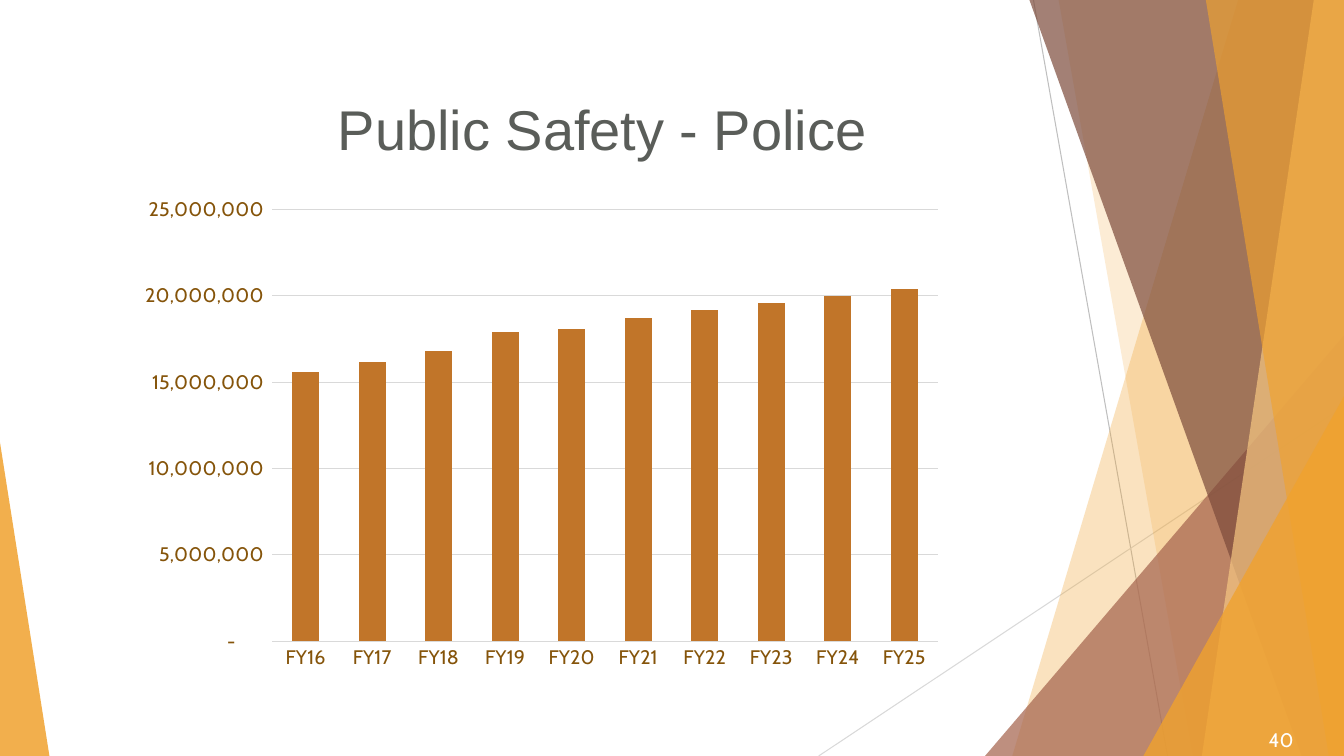
"""Build the police spending slide with its column chart and faceted backdrop."""
from dataclasses import dataclass

import pptx
import pptx.chart.data
import pptx.dml.color
import pptx.enum.chart
import pptx.enum.shapes
import pptx.enum.text
import pptx.oxml
import pptx.oxml.ns
import pptx.util

Inches = pptx.util.Inches
Pt = pptx.util.Pt
qn = pptx.oxml.ns.qn

WIDTH, HEIGHT = 13.33, 7.5
AMBER, RUST, BROWN, SAND = "F0A22E", "A5644E", "7C4B3B", "F6C782"
GRID, AXIS_TEXT, BAR = "D9D9D9", "85540A", "C17529"
NUMBER_FORMAT = '_(* #,##0_);_(* \\(#,##0\\);_(* "-"??_);_(@_)'
SPENDING = {
    "FY16": 15600000, "FY17": 16200000, "FY18": 16800000, "FY19": 17900000,
    "FY20": 18100000, "FY21": 18700000, "FY22": 19200000, "FY23": 19600000,
    "FY24": 20000000, "FY25": 20400000,
}


@dataclass
class Ray:
    start: tuple[float, float]
    end: tuple[float, float]
    color: str


@dataclass
class Band:
    top: float
    bottom: float
    color: str
    opacity: int


@dataclass
class Corner:
    left: float
    top: float
    width: float
    apex: int
    color: str
    opacity: int


BACKDROP = [
    Ray((10.25, 0), (11.58, HEIGHT), "BFBFBF"),
    Ray((WIDTH, 4.03), (8.12, HEIGHT), GRID),
    Band(12.28, 10.04, AMBER, 30),
    Band(10.5, 11.83, AMBER, 20),
    Corner(9.77, 3.33, 3.56, 1, RUST, 72),
    Band(10.21, 12.91, BROWN, 70),
    Band(13.03, 11.92, SAND, 70),
    Band(11.96, 13.18, AMBER, 65),
    Corner(11.34, 3.93, 1.99, 1, AMBER, 80),
    Corner(0, 4.39, 0.49, 0, AMBER, 85),
]


def rgb(color: str) -> pptx.dml.color.RGBColor:
    return pptx.dml.color.RGBColor.from_string(color)


def paint(sp, color: str, opacity: int) -> None:
    sp.shadow.inherit = False
    sp.line.fill.background()
    sp.fill.solid()
    sp.fill.fore_color.rgb = rgb(color)
    clr = sp.fill._xPr.find(qn("a:solidFill"))[0]
    clr.append(pptx.oxml.parse_xml(
        f'<a:alpha {pptx.oxml.ns.nsdecls("a")} val="{opacity * 1000}"/>'))


def draw_ray(s, ray: Ray) -> None:
    points = [Inches(v) for v in (*ray.start, *ray.end)]
    line = s.shapes.add_connector(pptx.enum.shapes.MSO_CONNECTOR.STRAIGHT, *points)
    line.line.color.rgb = rgb(ray.color)
    line.line.width = Pt(0.75)
    line._element.spPr.append(pptx.oxml.parse_xml(
        f'<a:effectLst {pptx.oxml.ns.nsdecls("a")}/>'))


def draw_band(s, band: Band) -> None:
    builder = s.shapes.build_freeform(Inches(band.top), 0)
    corners = [(WIDTH, 0), (WIDTH, HEIGHT), (band.bottom, HEIGHT)]
    builder.add_line_segments([(Inches(x), Inches(y)) for x, y in corners])
    paint(builder.convert_to_shape(), band.color, band.opacity)


def draw_corner(s, corner: Corner) -> None:
    box = (corner.left, corner.top, corner.width, HEIGHT - corner.top)
    sp = s.shapes.add_shape(pptx.enum.shapes.MSO_SHAPE.ISOSCELES_TRIANGLE,
                            *[Inches(v) for v in box])
    sp.adjustments[0] = corner.apex
    paint(sp, corner.color, corner.opacity)


def write(sp, text: str, *, font: str, size: float, color: str, align, anchor) -> None:
    tf = sp.text_frame
    tf.word_wrap = True
    tf.auto_size = pptx.enum.text.MSO_AUTO_SIZE.NONE
    tf.vertical_anchor = anchor
    p = tf.paragraphs[0]
    p.alignment = align
    r = p.add_run()
    r.text = text
    r.font.name, r.font.size = font, Pt(size)
    r.font.color.rgb = rgb(color)


def format_axis(axis) -> None:
    axis.major_tick_mark = axis.minor_tick_mark = pptx.enum.chart.XL_TICK_MARK.NONE
    axis.format.line.fill.background()
    font = axis.tick_labels.font
    font.name, font.size = "Cabin", Pt(14)
    font.color.rgb = rgb(AXIS_TEXT)


def place_plot(chart, x: float, y: float, w: float, h: float) -> None:
    area = chart._chartSpace.chart.plotArea
    for old in area.findall(qn("c:layout")):
        area.remove(old)
    sizes = "".join(f'<c:{tag} val="{v}"/>' for tag, v in zip("xywh", (x, y, w, h)))
    area.insert(0, pptx.oxml.parse_xml(
        f'<c:layout {pptx.oxml.ns.nsdecls("c")}><c:manualLayout>'
        '<c:layoutTarget val="inner"/><c:xMode val="edge"/><c:yMode val="edge"/>'
        f'{sizes}</c:manualLayout></c:layout>'))


def draw_chart(s) -> None:
    data = pptx.chart.data.CategoryChartData()
    data.categories = list(SPENDING)
    data.add_series("Series 1", list(SPENDING.values()))
    box = [Inches(v) for v in (1.11, 1.89, 8.34, 5.14)]
    kind = pptx.enum.chart.XL_CHART_TYPE.COLUMN_CLUSTERED
    chart = s.shapes.add_chart(kind, *box, data).chart
    chart.has_legend = chart.has_title = False
    chart.font.name, chart.font.size = "Cabin", Pt(10)
    chart.font.color.rgb = rgb("000000")
    plot = chart.plots[0]
    plot.gap_width = 150
    plot.vary_by_categories = False
    fill = plot.series[0].format.fill
    fill.solid()
    fill.fore_color.rgb = rgb(BAR)
    format_axis(chart.category_axis)
    values = chart.value_axis
    format_axis(values)
    values.minimum_scale, values.maximum_scale = 0, 25000000
    values.major_unit = 5000000
    values.tick_labels.number_format = NUMBER_FORMAT
    values.tick_labels.number_format_is_linked = False
    values.major_gridlines.format.line.color.rgb = rgb(GRID)
    values.major_gridlines.format.line.width = Pt(0.75)
    place_plot(chart, 0.191, 0.037, 0.791, 0.833)


def main() -> None:
    prs = pptx.Presentation()
    prs.slide_width, prs.slide_height = Inches(WIDTH), Inches(HEIGHT)
    s = prs.slides.add_slide(prs.slide_layouts[5])
    draw = {Ray: draw_ray, Band: draw_band, Corner: draw_corner}
    for piece in BACKDROP:
        draw[type(piece)](s, piece)
    align, anchor = pptx.enum.text.PP_ALIGN, pptx.enum.text.MSO_ANCHOR
    title = s.shapes.title
    title.left, title.top = Inches(3.25), Inches(0.4)
    title.width, title.height = Inches(8.2), Inches(1.25)
    write(title, "Public Safety - Police", font="Arial", size=40, color="5A5D59",
          align=align.LEFT, anchor=anchor.BOTTOM)
    number = s.shapes.add_textbox(*[Inches(v) for v in (12.03, 7.17, 0.9, 0.33)])
    write(number, "40", font="Cabin", size=14, color="FFFFFF",
          align=align.RIGHT, anchor=anchor.MIDDLE)
    draw_chart(s)
    prs.save("out.pptx")


if __name__ == "__main__":
    main()
